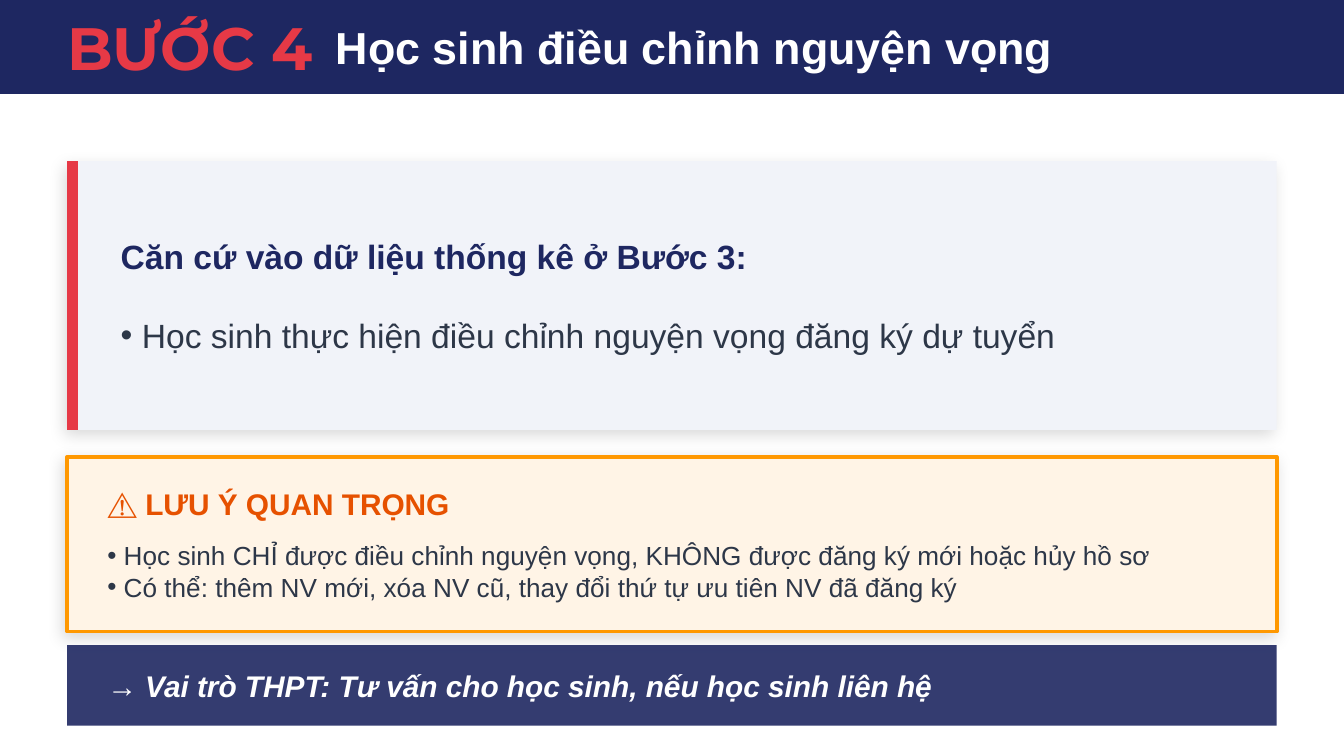
from lxml import etree
from pptx import Presentation
from pptx.dml.color import RGBColor
from pptx.enum import shapes, text
from pptx.oxml import ns
from pptx.util import Pt

NAVY = RGBColor(0x1E, 0x27, 0x61)
RED = RGBColor(0xE6, 0x39, 0x46)
WHITE = RGBColor(0xFF, 0xFF, 0xFF)
PALE = RGBColor(0xF1, 0xF3, 0xF9)
INK = RGBColor(0x2D, 0x37, 0x48)
CREAM = RGBColor(0xFF, 0xF4, 0xE6)
AMBER = RGBColor(0xFF, 0x98, 0x00)
ORANGE = RGBColor(0xE6, 0x51, 0x00)


def add_panel(slide, box, fill, line=None, shadow=False, opacity=100):
    """Draw a filled rectangle, optionally outlined, shadowed or translucent."""
    panel = slide.shapes.add_shape(shapes.MSO_SHAPE.RECTANGLE, *map(Pt, box))
    panel.shadow.inherit = False
    panel.fill.solid()
    panel.fill.fore_color.rgb = fill
    if line is None:
        panel.line.fill.background()
    else:
        panel.line.color.rgb = line
        panel.line.width = Pt(2)
    properties = panel._element.spPr
    if opacity < 100:
        color = properties.find(ns.qn("a:solidFill")).find(ns.qn("a:srgbClr"))
        etree.SubElement(color, ns.qn("a:alpha"), val=str(opacity * 1000))
    if shadow:
        effects = properties.find(ns.qn("a:effectLst"))
        outer = etree.SubElement(
            effects, ns.qn("a:outerShdw"), blurRad=str(Pt(8)), dist=str(Pt(3)),
            dir=str(135 * 60000), algn="bl", rotWithShape="0")
        color = etree.SubElement(outer, ns.qn("a:srgbClr"), val="000000")
        etree.SubElement(color, ns.qn("a:alpha"), val="15000")


def add_frame(slide, box, inset=True):
    """Add a wrapping, vertically centred text frame."""
    frame = slide.shapes.add_textbox(*map(Pt, box)).text_frame
    frame.word_wrap = True
    frame.vertical_anchor = text.MSO_ANCHOR.MIDDLE
    if not inset:
        frame.margin_left = frame.margin_right = Pt(0)
        frame.margin_top = frame.margin_bottom = Pt(0)
    return frame


def write(paragraph, words, size, color, bold=False, italic=False, name="Arial"):
    """Add one styled run to a paragraph."""
    run = paragraph.add_run()
    run.text = words
    run.font.name = name
    run.font.size = Pt(size)
    run.font.color.rgb = color
    run.font.bold = bold
    run.font.italic = italic


def set_bullet(paragraph, size):
    """Give a paragraph a round bullet with a hanging indent."""
    indent = Pt(round(size * 0.63, 2))
    properties = paragraph._p.get_or_add_pPr()
    properties.set("marL", str(indent))
    properties.set("indent", str(-indent))
    etree.SubElement(properties, ns.qn("a:buFont"), typeface="Arial")
    etree.SubElement(properties, ns.qn("a:buChar"), char="•")


def add_header(slide, box, step, title):
    """Place the title band with its step label and title."""
    left, top, width, height = box
    add_panel(slide, box, NAVY)
    step_frame = add_frame(slide, (left + 36, top + 7.2, 144, height - 14.4), inset=False)
    write(step_frame.paragraphs[0], step, 32, RED, bold=True, name="Montserrat")
    title_frame = add_frame(slide, (left + 180, top + 10.8, width - 216, height - 21.6), inset=False)
    write(title_frame.paragraphs[0], title, 24, WHITE, bold=True)


def add_basis_card(slide, box, heading, action):
    """Place the main card with its accent bar, heading and action."""
    left, top, width, height = box
    add_panel(slide, box, PALE, shadow=True)
    add_panel(slide, (left, top, 5.76, height), RED)
    frame = add_frame(slide, (left + 21.6, top + 14.4, width - 43.2, height - 28.8))
    write(frame.paragraphs[0], heading, 18, NAVY, bold=True)
    bullet = frame.add_paragraph()
    bullet.space_before = Pt(20.7)
    set_bullet(bullet, 18)
    write(bullet, action, 18, INK)


def add_notice(slide, box, heading, rules):
    """Place the outlined notice with its heading and bulleted rules."""
    left, top, width, height = box
    add_panel(slide, box, CREAM, line=AMBER, shadow=True)
    heading_frame = add_frame(slide, (left + 14.4, top + 14.4, width - 28.8, 21.6))
    write(heading_frame.paragraphs[0], heading, 16, ORANGE, bold=True)
    rules_frame = add_frame(slide, (left + 14.4, top + 39.6, width - 28.8, height - 50.4))
    for index, rule in enumerate(rules):
        bullet = rules_frame.add_paragraph() if index else rules_frame.paragraphs[0]
        set_bullet(bullet, 14)
        write(bullet, rule, 14, INK)


def add_role_bar(slide, box, role):
    """Place the closing bar that states the school's role."""
    left, top, width, height = box
    add_panel(slide, box, NAVY, opacity=90)
    frame = add_frame(slide, (left + 14.4, top + 7.2, width - 28.8, height - 14.4))
    write(frame.paragraphs[0], role, 16, WHITE, bold=True, italic=True)


def main():
    """Build the slide and save it."""
    deck = Presentation()
    deck.slide_width, deck.slide_height = Pt(720), Pt(405)
    slide = deck.slides.add_slide(deck.slide_layouts[6])
    add_header(slide, (0, 0, 720, 50.4), "BƯỚC 4", "Học sinh điều chỉnh nguyện vọng")
    add_basis_card(
        slide, (36, 86.4, 648, 144),
        "Căn cứ vào dữ liệu thống kê ở Bước 3:",
        "Học sinh thực hiện điều chỉnh nguyện vọng đăng ký dự tuyển")
    add_notice(
        slide, (36, 244.8, 648, 93.6), "⚠️ LƯU Ý QUAN TRỌNG",
        ["Học sinh CHỈ được điều chỉnh nguyện vọng, KHÔNG được đăng ký mới hoặc hủy hồ sơ",
         "Có thể: thêm NV mới, xóa NV cũ, thay đổi thứ tự ưu tiên NV đã đăng ký"])
    add_role_bar(
        slide, (36, 345.6, 648, 43.2),
        "→ Vai trò THPT: Tư vấn cho học sinh, nếu học sinh liên hệ")
    deck.save("out.pptx")


if __name__ == "__main__":
    main()
